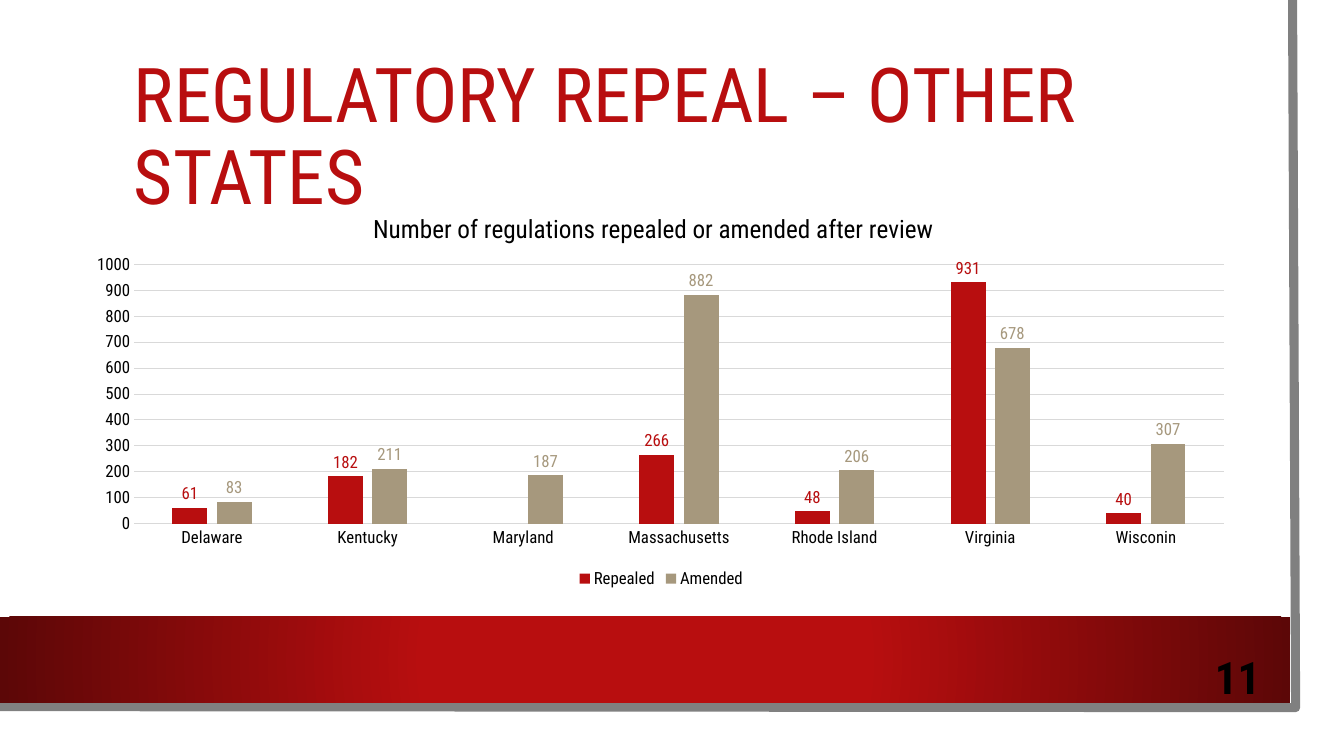
from lxml import etree
from pptx import Presentation
from pptx.chart.data import CategoryChartData
from pptx.dml.color import RGBColor
from pptx.enum.chart import XL_CHART_TYPE, XL_LABEL_POSITION, XL_LEGEND_POSITION, XL_TICK_MARK
from pptx.enum.shapes import MSO_SHAPE
from pptx.enum.text import MSO_ANCHOR, PP_ALIGN
from pptx.oxml import parse_xml
from pptx.oxml.ns import nsdecls
from pptx.util import Pt

PX = 9144  # 100 px to the inch
FONT = "Roboto Condensed"
RED, DARK_RED, TAN = "B80E0F", "5C0707", "A6987D"
BLACK, WHITE, GREY, GRID = "000000", "FFFFFF", "808080", "D9D9D9"


def style_font(font, size, color, bold=False):
    font.name, font.size, font.bold = FONT, Pt(size), bold
    font.color.rgb = RGBColor.from_string(color)


def manual_layout(inner, **fractions):
    """Return a c:layout element placed by fractions of the chart area."""
    target = '<c:layoutTarget val="inner"/>' if inner else ""
    modes = "".join(f'<c:{k}Mode val="edge"/>' for k in fractions if k in "xy")
    values = "".join(f'<c:{k} val="{v}"/>' for k, v in fractions.items())
    return parse_xml(f'<c:layout {nsdecls("c")}><c:manualLayout>{target}{modes}{values}'
                     '</c:manualLayout></c:layout>')


prs = Presentation()
prs.slide_width, prs.slide_height = 1333 * PX, 750 * PX
s = prs.slides.add_slide(prs.slide_layouts[6])

# Page, its grey edge and the red band
page = s.shapes.add_shape(MSO_SHAPE.RECTANGLE, 0, 0, 1310 * PX, 727 * PX)
page.fill.solid()
page.fill.fore_color.rgb = RGBColor.from_string(WHITE)

builder = s.shapes.build_freeform(1282, 0, scale=PX)
builder.add_line_segments([(1285, 702), (-3, 701)], close=False)
edge = builder.convert_to_shape()
edge.fill.background()

band = s.shapes.add_shape(MSO_SHAPE.RECTANGLE, 0, 612 * PX, 1280 * PX, 85 * PX)
band.fill.gradient()
for stop, color, position in zip(band.fill.gradient_stops, (RED, DARK_RED), (0.34, 1)):
    stop.color.rgb = RGBColor.from_string(color)
    stop.position = position
grad = band.fill._xPr.gradFill
grad.remove(grad.lin)
grad.append(parse_xml(f'<a:path {nsdecls("a")} path="circle">'
                      '<a:fillToRect l="50000" t="50000" r="50000" b="50000"/></a:path>'))

for shape in (page, edge, band):
    shape.shadow.inherit = False
    shape.line.fill.background()
edge.line.width = Pt(6.5)
edge.line.fill.solid()
edge.line.fill.fore_color.rgb = RGBColor.from_string(GREY)

# Chart
data = CategoryChartData()
data.categories = ["Delaware", "Kentucky", "Maryland", "Massachusetts",
                   "Rhode Island", "Virginia", "Wisconin"]
data.add_series("Repealed", [61, 182, None, 266, 48, 931, 40])
data.add_series("Amended", [83, 211, 187, 882, 206, 678, 307])
chart = s.shapes.add_chart(XL_CHART_TYPE.COLUMN_CLUSTERED, 75 * PX, 186 * PX,
                           1162 * PX, 402 * PX, data).chart
style_font(chart.font, 10, BLACK)

chart.has_title = True
title_tf = chart.chart_title.text_frame
title_tf.text = "Number of regulations repealed or amended after review"
style_font(title_tf.paragraphs[0].runs[0].font, 18, BLACK)
title_xml = chart.chart_title._element
for old in title_xml.findall("{*}layout"):
    title_xml.remove(old)
title_xml.find("{*}tx").addnext(manual_layout(False, x=0.25, y=0.05))
chart.chart_title.include_in_layout = False

plot_area = chart._chartSpace.chart.plotArea
for old in plot_area.findall("{*}layout"):
    plot_area.remove(old)
plot_area.insert(0, manual_layout(True, x=0.05, y=0.19, w=0.93, h=0.64))

chart.has_legend = True
chart.legend.position = XL_LEGEND_POSITION.BOTTOM
chart.legend.include_in_layout = False
style_font(chart.legend.font, 12, BLACK)

categories, values = chart.category_axis, chart.value_axis
for axis in (categories, values):
    axis.major_tick_mark = axis.minor_tick_mark = XL_TICK_MARK.NONE
    style_font(axis.tick_labels.font, 12, BLACK)
values.minimum_scale, values.maximum_scale, values.major_unit = 0, 1000, 100
values.format.line.fill.background()
for line in (categories.format.line, values.major_gridlines.format.line):
    line.width = Pt(0.75)
    line.color.rgb = RGBColor.from_string(GRID)

plot = chart.plots[0]
plot.gap_width, plot.overlap, plot.vary_by_categories = 219, -27, False
for series, color in zip(plot.series, (RED, TAN)):
    series.format.fill.solid()
    series.format.fill.fore_color.rgb = RGBColor.from_string(color)
    labels = series.data_labels
    labels.show_value = True
    labels.position = XL_LABEL_POSITION.OUTSIDE_END
    style_font(labels.font, 12, color)

# Heading and slide number
for text, box, size, color, bold, align in (
        ("REGULATORY REPEAL – OTHER STATES", (123, 75, 1088, 126), 54, RED, False, PP_ALIGN.LEFT),
        ("11", (1178, 644, 99, 55), 32, BLACK, True, PP_ALIGN.CENTER)):
    tf = s.shapes.add_textbox(*(v * PX for v in box)).text_frame
    tf.word_wrap = True
    tf.vertical_anchor = MSO_ANCHOR.MIDDLE
    tf.text = text
    p = tf.paragraphs[0]
    p.alignment = align
    p.line_spacing = 0.9 if size == 54 else 1.0
    style_font(p.runs[0].font, size, color, bold)

prs.save("out.pptx")
